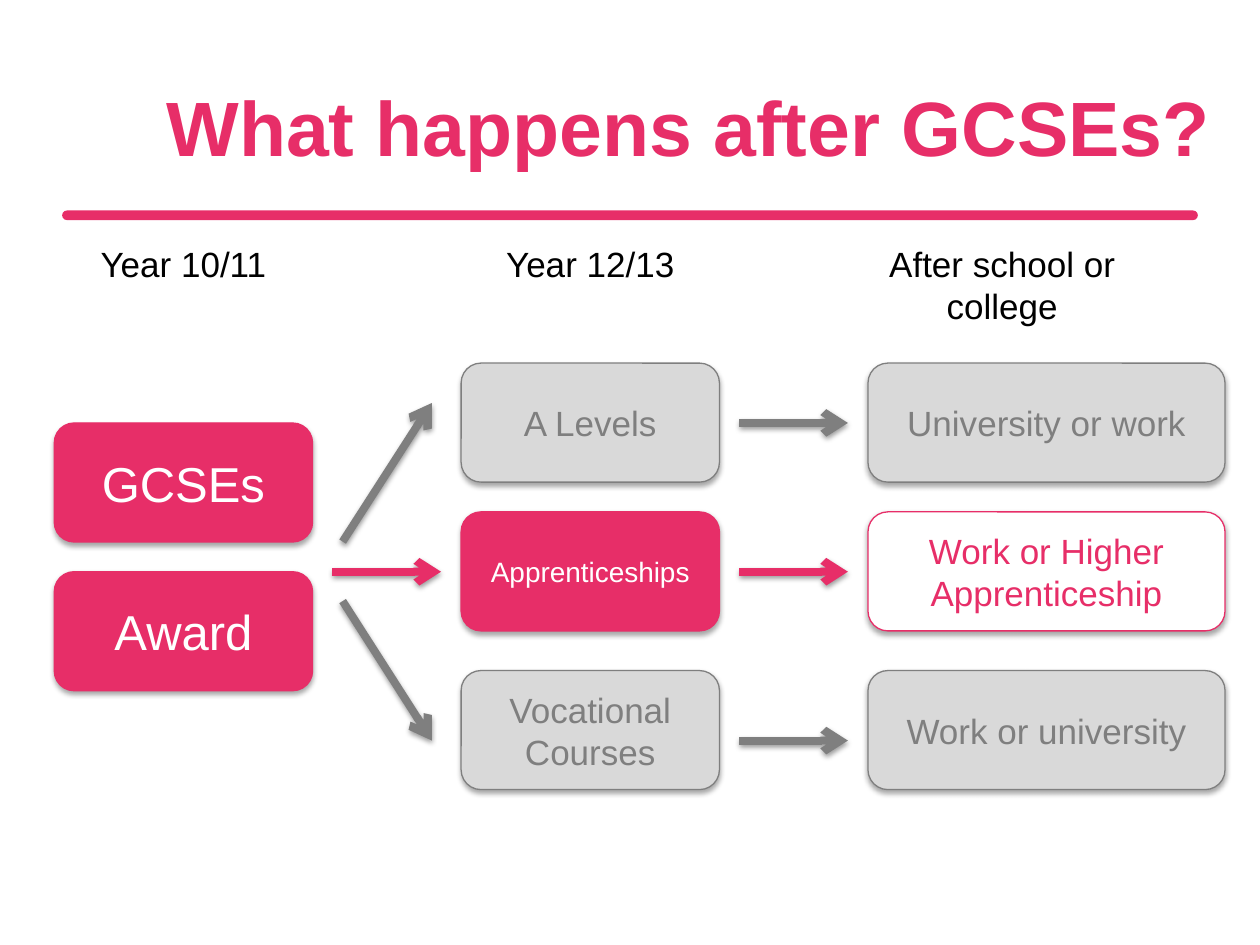
from lxml import etree
from pptx import Presentation
from pptx.dml.color import RGBColor
from pptx.enum.shapes import MSO_CONNECTOR, MSO_SHAPE
from pptx.enum.text import MSO_ANCHOR, PP_ALIGN
from pptx.oxml.ns import qn
from pptx.util import Pt

ROUNDED, STRAIGHT = MSO_SHAPE.ROUNDED_RECTANGLE, MSO_CONNECTOR.STRAIGHT
LEFT, CENTER = PP_ALIGN.LEFT, PP_ALIGN.CENTER
TOP, MIDDLE = MSO_ANCHOR.TOP, MSO_ANCHOR.MIDDLE

PINK = RGBColor(0xE7, 0x2E, 0x68)
GREY = RGBColor(0x7F, 0x7F, 0x7F)
PALE = RGBColor(0xD9, 0xD9, 0xD9)
WHITE = RGBColor(0xFF, 0xFF, 0xFF)
BLACK = RGBColor(0, 0, 0)
FONT = "Arial"

# Box styles: fill, line, text colour
SOLID = (PINK, PINK, WHITE)
MUTED = (PALE, GREY, GREY)
OUTLINE = (WHITE, PINK, PINK)

TITLE = "What happens after GCSEs?"
HEADINGS = [  # left, width, lines
    (31, 147.6, ["Year 10/11"]),
    (263.5, 147.6, ["Year 12/13"]),
    (499.7, 146, ["After school or", "college"]),
]
COLUMNS = [  # left, width, boxes as (top, text, size, style)
    (31, 147.6, [
        (241.7, "GCSEs", 28, SOLID),
        (326.7, "Award", 28, SOLID),
    ]),
    (263.5, 147.6, [
        (207.5, "A Levels", 20, MUTED),
        (292.5, "Apprenticeships", 16, SOLID),
        (383.2, "Vocational Courses", 20, MUTED),
    ]),
    (496, 204, [
        (207.5, "University or work", 20, MUTED),
        (292.5, "Work or Higher Apprenticeship", 20, OUTLINE),
        (383.2, "Work or university", 20, MUTED),
    ]),
]
BOX_H = 68
ROUTES = [(241.7, GREY), (326.7, PINK), (423.2, GREY)]  # height and colour of arrows
ARROWS = [  # x1, y1, x2, y2, colour
    (195.8, 309.5, 246.8, 230.3, GREY),
    (190, 326.7, 252, 326.7, PINK),
    (195.8, 343.5, 246.8, 423.2, GREY),
] + [(422.5, y, 484.5, y, color) for y, color in ROUTES]


def set_text(sp, lines, size=20, color=BLACK, bold=False, align=CENTER, anchor=MIDDLE):
    tf = sp.text_frame
    tf.word_wrap = True
    tf.vertical_anchor = anchor
    for i, line in enumerate(lines):
        p = tf.add_paragraph() if i else tf.paragraphs[0]
        p.alignment = align
        r = p.add_run()
        r.text = line
        r.font.name, r.font.size, r.font.bold = FONT, Pt(size), bold
        r.font.color.rgb = color


def add_shadow(sp, distance, opacity):
    """Add a soft black shadow below; the line must be formatted first."""
    effects = etree.SubElement(sp._element.spPr, qn("a:effectLst"))
    shadow = etree.SubElement(effects, qn("a:outerShdw"), blurRad=str(Pt(3.1)),
                              dist=str(Pt(distance)), dir="5400000", rotWithShape="0")
    black = etree.SubElement(shadow, qn("a:srgbClr"), val="000000")
    etree.SubElement(black, qn("a:alpha"), val=str(opacity * 1000))


def add_box(s, x, y, w, text, size, style):
    fill, line, color = style
    sp = s.shapes.add_shape(ROUNDED, Pt(x), Pt(y), Pt(w), Pt(BOX_H))
    sp.fill.solid()
    sp.fill.fore_color.rgb = fill
    sp.line.color.rgb = line
    sp.line.width = Pt(0.75)
    add_shadow(sp, 1.8, 35)
    set_text(sp, [text], size=size, color=color)


def add_arrow(s, x1, y1, x2, y2, color):
    cx = s.shapes.add_connector(STRAIGHT, Pt(x1), Pt(y1), Pt(x2), Pt(y2))
    cx.line.color.rgb = color
    cx.line.width = Pt(4.5)
    etree.SubElement(cx.line._get_or_add_ln(), qn("a:tailEnd"), type="arrow")
    add_shadow(cx, 1.6, 38)


def add_rule(s):
    sp = s.shapes.add_shape(ROUNDED, Pt(35.5), Pt(120.3), Pt(649), Pt(5.5))
    sp.adjustments[0] = 0.5
    sp.shadow.inherit = False
    sp.fill.solid()
    sp.fill.fore_color.rgb = PINK
    sp.line.fill.background()


def main():
    prs = Presentation()
    prs.slide_width, prs.slide_height = Pt(720), Pt(540)
    s = prs.slides.add_slide(prs.slide_layouts[5])

    title = s.shapes.title
    title.left, title.top, title.width, title.height = Pt(88), Pt(26.6), Pt(632), Pt(90)
    set_text(title, [TITLE], size=44, color=PINK, bold=True, align=LEFT)
    add_rule(s)

    for x, w, boxes in COLUMNS:
        for y, text, size, style in boxes:
            add_box(s, x, y, w, text, size, style)
    for arrow in ARROWS:
        add_arrow(s, *arrow)
    for x, w, lines in HEADINGS:
        tb = s.shapes.add_textbox(Pt(x), Pt(135), Pt(w), Pt(7.5 + 24 * len(lines)))
        set_text(tb, lines, anchor=TOP)

    prs.save("out.pptx")


if __name__ == "__main__":
    main()
